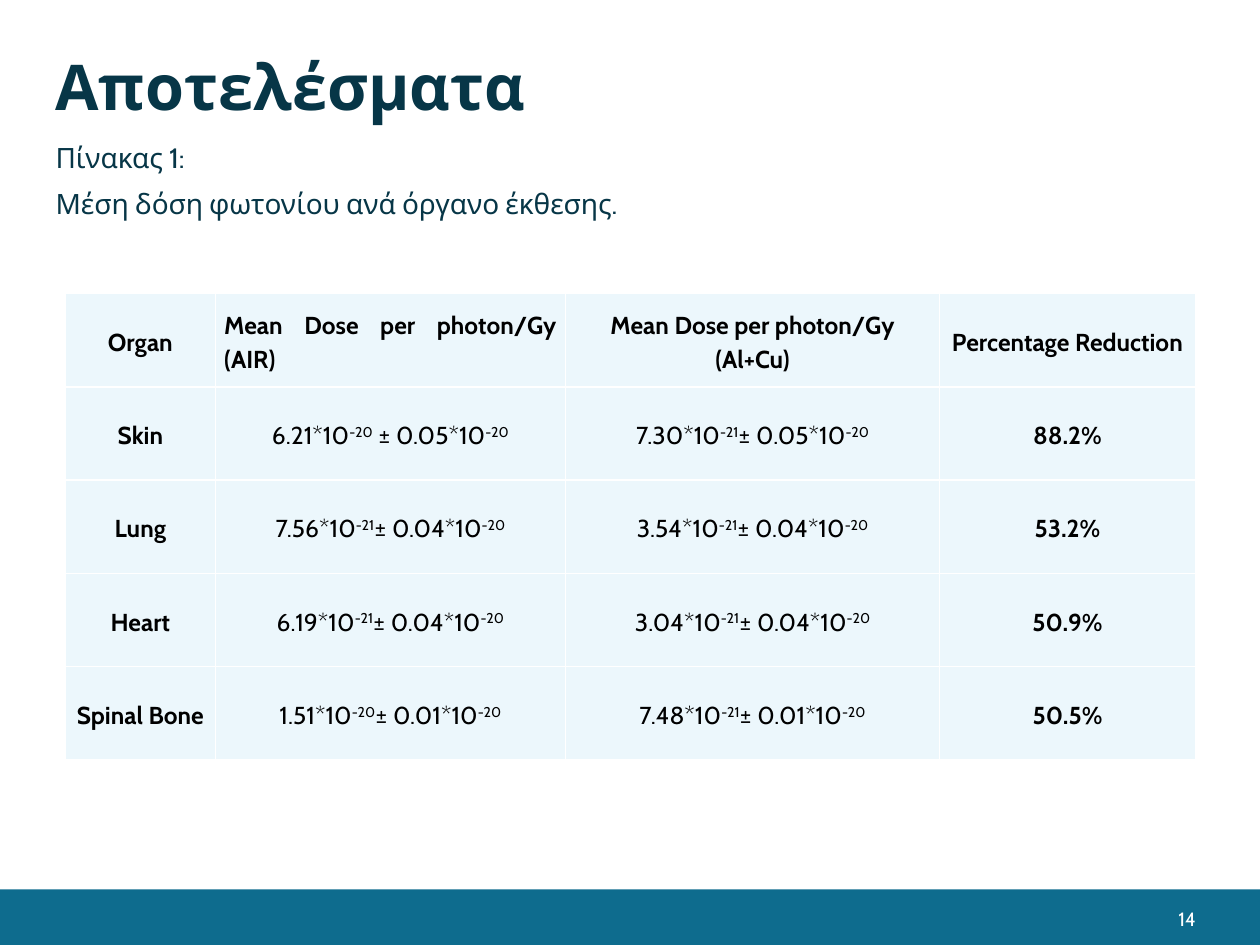
from dataclasses import dataclass
from typing import Any

from lxml import etree
from pptx import Presentation
from pptx import util as u
from pptx.dml import color
from pptx.enum import shapes, text
from pptx.oxml import ns

ALIGN = text.PP_ALIGN


def rgb(value):
    return color.RGBColor.from_string(value)


@dataclass
class ResultsSlide:
    """Holds the slide and its style, and draws each kind of element."""

    slide: Any
    font: str = "Cabin"
    heading: str = "073647"
    footer: str = "0E6C8E"
    cell_fill: str = "ECF7FC"
    white: str = "FFFFFF"
    black: str = "000000"

    def style(self, paragraph, size, ink, bold=False, align=ALIGN.LEFT):
        paragraph.alignment = align
        paragraph.font.name = self.font
        paragraph.font.size = u.Pt(size)
        paragraph.font.bold = bold
        paragraph.font.color.rgb = rgb(ink)

    def bar(self, left, top, width, height):
        band = self.slide.shapes.add_shape(
            shapes.MSO_SHAPE.RECTANGLE, u.Cm(left), u.Cm(top), u.Cm(width), u.Cm(height))
        band.shadow.inherit = False
        band.fill.solid()
        band.fill.fore_color.rgb = rgb(self.footer)
        band.line.fill.background()

    def label(self, box, lines, size, ink, bold=False, align=ALIGN.LEFT,
              anchor=text.MSO_ANCHOR.MIDDLE, inset=(0, 0), spacing=1.0, gap=0):
        frame = self.slide.shapes.add_textbox(*map(u.Cm, box)).text_frame
        frame.word_wrap = True
        frame.vertical_anchor = anchor
        frame.margin_left = frame.margin_right = u.Cm(inset[0])
        frame.margin_top = frame.margin_bottom = u.Cm(inset[1])
        for index, line in enumerate(lines):
            paragraph = frame.add_paragraph() if index else frame.paragraphs[0]
            paragraph.text = line
            self.style(paragraph, size, ink, bold, align)
            paragraph.line_spacing = spacing
            paragraph.space_before = u.Pt(gap if index else 0)
            paragraph.space_after = u.Pt(gap)

    def cell(self, cell, content, bold, align):
        cell.vertical_anchor = text.MSO_ANCHOR.MIDDLE
        cell.margin_left = cell.margin_right = u.Cm(0.18)
        cell.margin_top = cell.margin_bottom = 0
        paragraph = cell.text_frame.paragraphs[0]
        for index, part in enumerate(content.split("|")):
            if part:
                run = paragraph.add_run()
                run.text = part
                if index % 2:
                    run._r.get_or_add_rPr().set("baseline", "30000")
        self.style(paragraph, 14, self.black, bold, align)
        paragraph.line_spacing = 1.15
        properties = cell._tc.get_or_add_tcPr()
        for side in ("lnL", "lnR", "lnT", "lnB"):
            edge = etree.SubElement(properties, ns.qn(f"a:{side}"), w=str(u.Pt(1)))
            fill = etree.SubElement(edge, ns.qn("a:solidFill"))
            etree.SubElement(fill, ns.qn("a:srgbClr"), val=self.white)
        cell.fill.solid()
        cell.fill.fore_color.rgb = rgb(self.cell_fill)

    def table(self, left, top, widths, row_height, rows):
        grid = self.slide.shapes.add_table(
            len(rows), len(widths), u.Cm(left), u.Cm(top),
            u.Cm(sum(widths)), u.Cm(row_height * len(rows))).table
        grid.first_row = grid.horz_banding = False
        for column, width in zip(grid.columns, widths):
            column.width = u.Cm(width)
        for r, row in enumerate(rows):
            grid.rows[r].height = u.Cm(row_height)
            for c, content in enumerate(row):
                bold = r == 0 or c in (0, len(widths) - 1)
                align = ALIGN.JUSTIFY if (r, c) == (0, 1) else ALIGN.CENTER
                self.cell(grid.cell(r, c), content, bold, align)


DOSES = [
    ("Organ", "Mean Dose per photon/Gy (AIR)", "Mean Dose per photon/Gy (Al+Cu)",
     "Percentage Reduction"),
    ("Skin", "6.21*10|-20| ± 0.05*10|-20", "7.30*10|-21|± 0.05*10|-20", "88.2%"),
    ("Lung", "7.56*10|-21|± 0.04*10|-20", "3.54*10|-21|± 0.04*10|-20", "53.2%"),
    ("Heart", "6.19*10|-21|± 0.04*10|-20", "3.04*10|-21|± 0.04*10|-20", "50.9%"),
    ("Spinal Bone", "1.51*10|-20|± 0.01*10|-20", "7.48*10|-21|± 0.01*10|-20", "50.5%"),
]


def main():
    deck = Presentation()
    deck.slide_width, deck.slide_height = u.Cm(25.4), u.Cm(19.05)
    results = ResultsSlide(deck.slides.add_slide(deck.slide_layouts[6]))
    results.bar(0, 17.93, 25.4, 1.12)
    results.label((18.57, 17.93, 5.72, 1.17), ["14"], 11, results.white,
                  align=ALIGN.RIGHT, inset=(0.18, 0.1))
    results.label((1.12, 1.12, 23.14, 1.19), ["Αποτελέσματα"], 36, results.heading, bold=True)
    results.table(1.32, 5.92, (3.02, 7.06, 7.54, 5.16), 1.88, DOSES)
    results.label((1.12, 2.92, 21.18, 2.39),
                  ["Πίνακας 1:", "Μέση δόση φωτονίου ανά όργανο έκθεσης."],
                  16, results.heading, anchor=text.MSO_ANCHOR.TOP, spacing=0.9, gap=4.5)
    deck.save("out.pptx")


if __name__ == "__main__":
    main()
